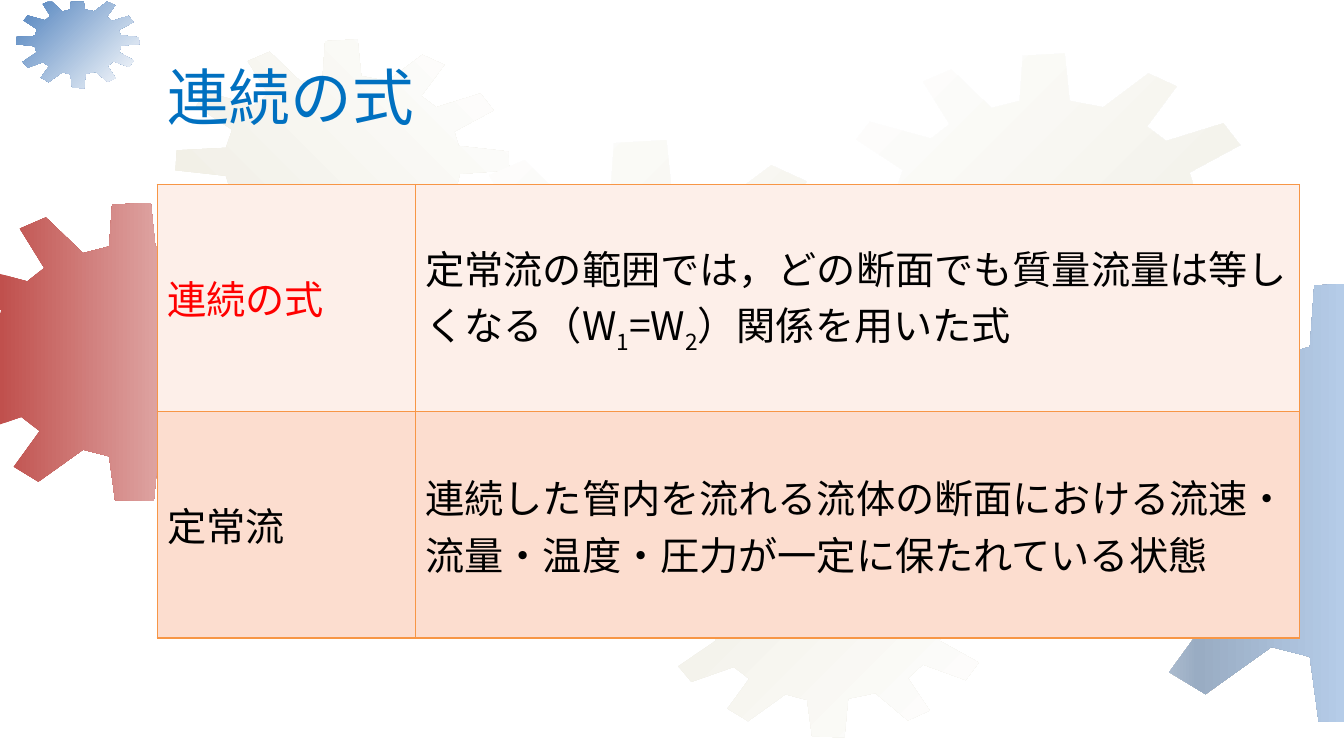
from copy import deepcopy

from lxml import etree
from pptx import Presentation
from pptx.dml.color import RGBColor
from pptx.enum.text import MSO_ANCHOR, PP_ALIGN
from pptx.oxml.ns import qn
from pptx.util import Inches, Pt

MIDDLE = MSO_ANCHOR.MIDDLE
LEFT = PP_ALIGN.LEFT
SLIDE_W, SLIDE_H = 13.33, 7.5
CJK = "Noto Sans CJK JP"

GEAR_WIDTH = 5.35
GEAR_OUTLINE = [
    (3.4, 0.67), (2.98, 0.59), (2.92, 0), (2.4, 0.03), (2.36, 0.59), (2.01, 0.68),
    (1.51, 0.2), (1.16, 0.35), (1.49, 0.88), (1.26, 1.06), (0.5, 0.85), (0.33, 1.07),
    (0.91, 1.45), (0.81, 1.74), (0.02, 1.78), (0, 2.1), (0.81, 2.19), (0.89, 2.46),
    (0.29, 2.87), (0.5, 3.12), (1.18, 2.88), (1.43, 3.07), (1.08, 3.55), (1.41, 3.75),
    (2.01, 3.32), (2.36, 3.41), (2.44, 4), (2.96, 4.01), (3.02, 3.39), (3.46, 3.3),
    (3.98, 3.74), (4.33, 3.58), (3.98, 3.06), (4.22, 2.84), (4.91, 3.09), (5.12, 2.81),
    (4.49, 2.46), (4.56, 2.16), (5.35, 2.1), (5.34, 1.8), (4.54, 1.71), (4.47, 1.48),
    (5.1, 1.14), (4.89, 0.87), (4.18, 1.09), (3.94, 0.91), (4.31, 0.41), (3.96, 0.25),
]
CREAM_IN = [(0, "EEECE1"), (1, "FFFFFF")]
CREAM_OUT = [(0, "FFFFFF"), (1, "EEECE1")]
# left, top, width, gradient stops, clockwise gradient angle
GEARS = [
    (-0.66, 2.01, 3.95, [(0, "C0504D"), (1, "FFFFFF")], 0),
    (0.16, -0.04, 1.22, [(0, "4F81BD"), (1, "FFFFFF")], 45),
    (1.74, 0.39, 3.31, CREAM_IN, 315),
    (3.69, 1.39, 5.35, CREAM_OUT, 45),
    (6.55, 4.84, 3.3, CREAM_IN, 45),
    (8.23, 0.53, 4.27, CREAM_OUT, 45),
    (10.42, 2.8, 5.83, [(0, "FFFFFF"), (0.5, "99ACC3"), (1, "B5CCE8")], 0),
]

TERMS = [
    ("FDEFE9", [("連続の式", {"color": "FF0000"})],
     [("定常流の範囲では，どの断面でも質量流量は等しくなる（W", {}), ("1", {"baseline": -25}),
      ("=W", {}), ("2", {"baseline": -25}), ("）関係を用いた式", {})]),
    ("FCDDCF", [("定常流", {})],
     [("連続した管内を流れる流体の断面における流速・流量・温度・圧力が一定に保たれている状態", {})]),
]


def rgb(hex_color):
    return RGBColor.from_string(hex_color)


def clip(points, axis, limit, sign):
    """Keep the part of a polygon where sign * (coordinate - limit) >= 0."""
    kept = []
    for a, b in zip(points, points[1:] + points[:1]):
        da, db = sign * (a[axis] - limit), sign * (b[axis] - limit)
        if da >= 0:
            kept.append(a)
        if da * db < 0:
            t = da / (da - db)
            kept.append((a[0] + t * (b[0] - a[0]), a[1] + t * (b[1] - a[1])))
    return kept


def add_run(paragraph, text, size=28, font=CJK, color="000000", baseline=0):
    run = paragraph.add_run()
    run.text = text
    run.font.size = Pt(size)
    run.font.name = font
    run.font.color.rgb = rgb(color)
    properties = run.font._element
    etree.SubElement(properties, qn("a:ea")).set("typeface", CJK)
    if baseline:
        properties.set("baseline", str(baseline * 1000))


class Deck:
    border = "F79646"
    border_width = 1

    def __init__(self):
        self.presentation = Presentation()
        self.presentation.slide_width = Inches(SLIDE_W)
        self.presentation.slide_height = Inches(SLIDE_H)
        layout = self.presentation.slide_layouts[5]
        self.slide = self.presentation.slides.add_slide(layout)

    def gear(self, left, top, width, stops, angle):
        """Draw a gear, cut off at the slide edges."""
        scale = width / GEAR_WIDTH
        points = [(left + x * scale, top + y * scale) for x, y in GEAR_OUTLINE]
        for edge in ((0, 0, 1), (0, SLIDE_W, -1), (1, 0.02, 1)):
            points = clip(points, *edge)
        corners = [(Inches(x), Inches(y)) for x, y in points]
        builder = self.slide.shapes.build_freeform(*corners[0])
        builder.add_line_segments(corners[1:], close=True)
        gear = builder.convert_to_shape()
        gear.shadow.inherit = False
        gear.line.fill.background()
        self.gradient(gear.fill, stops, angle)

    def gradient(self, fill, stops, angle):
        fill.gradient()
        fill.gradient_angle = (360 - angle) % 360
        stop_list = fill._xPr.find(qn("a:gradFill")).find(qn("a:gsLst"))
        while len(stop_list) < len(stops):
            stop_list.append(deepcopy(stop_list[-1]))
        for stop, (position, color) in zip(fill.gradient_stops, stops):
            stop.position = position
            stop.color.rgb = rgb(color)

    def title(self, text, left, top, width, height):
        """Place the title in front of everything drawn so far."""
        title = self.slide.shapes.title
        title.left, title.top = Inches(left), Inches(top)
        title.width, title.height = Inches(width), Inches(height)
        title.text_frame.vertical_anchor = MIDDLE
        paragraph = title.text_frame.paragraphs[0]
        paragraph.alignment = LEFT
        add_run(paragraph, text, size=44, font="Arial", color="0070C0")
        self.slide.shapes._spTree.append(title._element)

    def table(self, rows, left, top, column_widths, row_height):
        table = self.slide.shapes.add_table(
            len(rows), len(column_widths), Inches(left), Inches(top),
            Inches(sum(column_widths)), Inches(row_height * len(rows))).table
        table.first_row = False
        table.horz_banding = False
        for column, width in zip(table.columns, column_widths):
            column.width = Inches(width)
        for r, (fill, *texts) in enumerate(rows):
            table.rows[r].height = Inches(row_height)
            for c, runs in enumerate(texts):
                self.cell(table.cell(r, c), fill, runs)

    def cell(self, cell, fill, runs):
        cell.vertical_anchor = MIDDLE
        properties = cell._tc.get_or_add_tcPr()
        for side in ("a:lnL", "a:lnR", "a:lnT", "a:lnB"):
            line = etree.SubElement(properties, qn(side), w=str(Pt(self.border_width)))
            solid = etree.SubElement(line, qn("a:solidFill"))
            etree.SubElement(solid, qn("a:srgbClr"), val=self.border)
        cell.fill.solid()
        cell.fill.fore_color.rgb = rgb(fill)
        paragraph = cell.text_frame.paragraphs[0]
        for text, text_format in runs:
            add_run(paragraph, text, **text_format)


def main():
    deck = Deck()
    for gear in GEARS:
        deck.gear(*gear)
    deck.title("連続の式", 1.56, 0.33, 11.33, 1.25)
    deck.table(TERMS, 1.56, 1.83, [2.56, 8.77], 2.25)
    deck.presentation.save("out.pptx")


if __name__ == "__main__":
    main()
